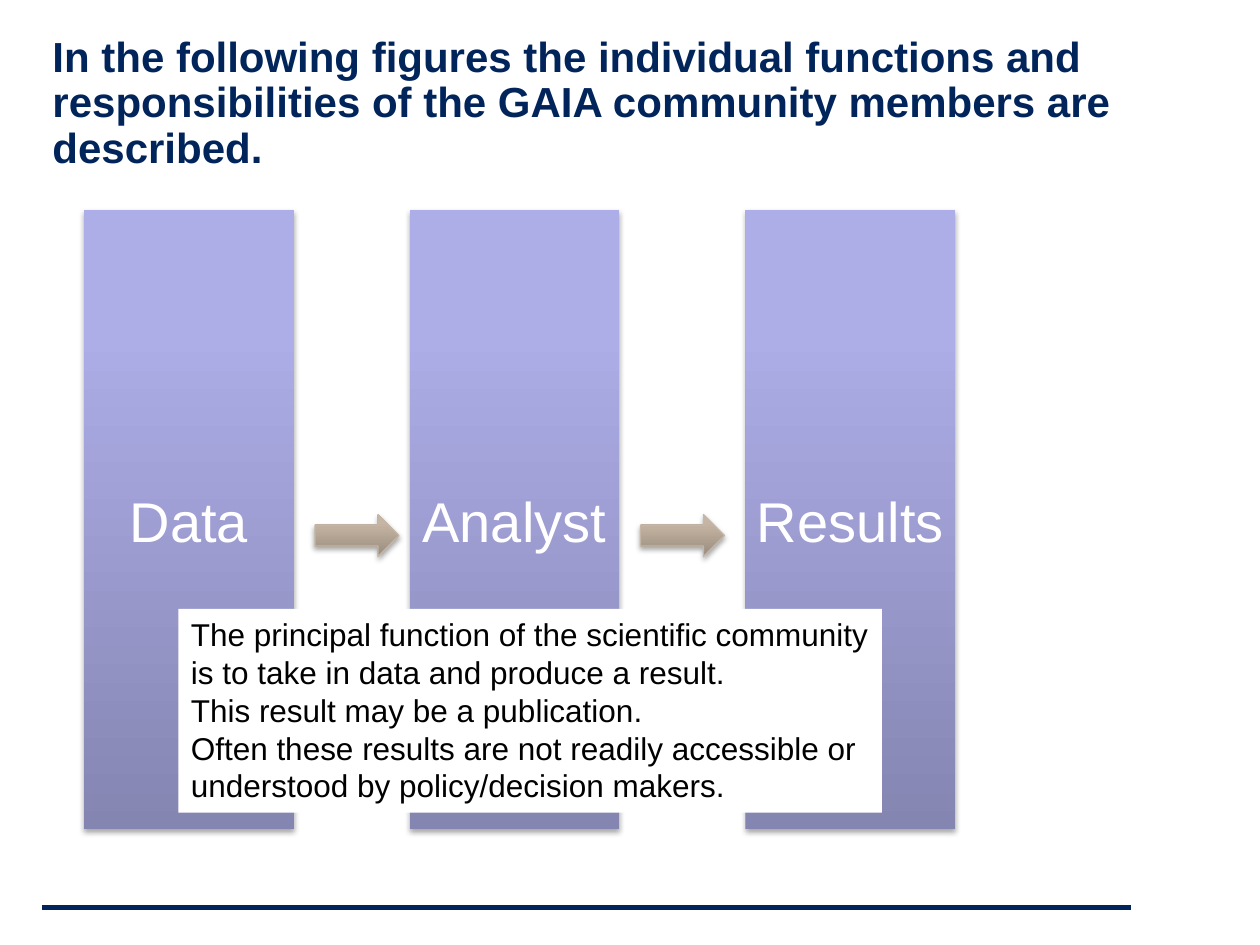
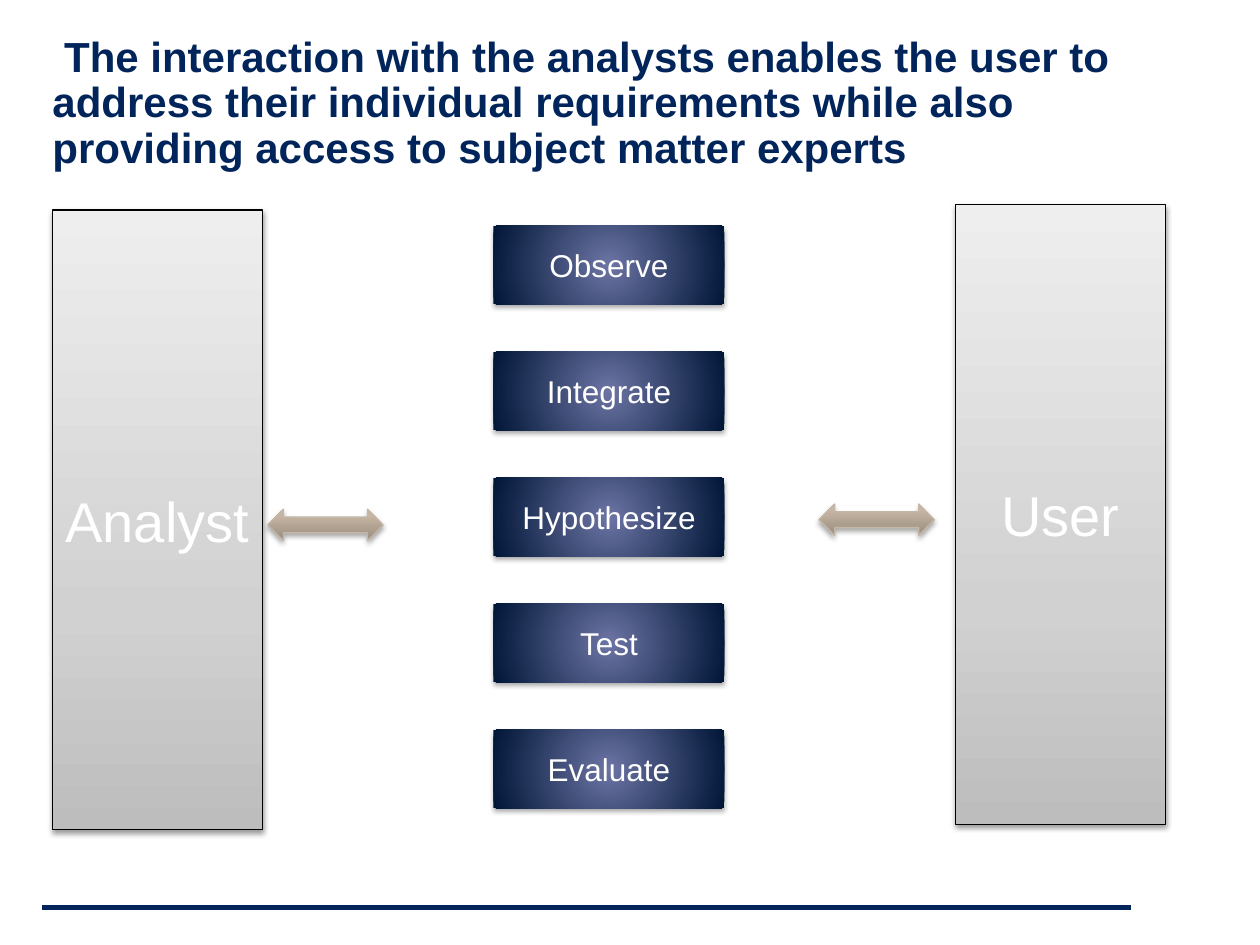
from dataclasses import dataclass
from typing import Optional

from lxml.etree import SubElement
from pptx import Presentation
from pptx.dml.color import RGBColor
from pptx.enum.shapes import MSO_CONNECTOR, MSO_SHAPE
from pptx.enum.text import MSO_ANCHOR, MSO_AUTO_SIZE, PP_ALIGN
from pptx.oxml.ns import qn
from pptx.util import Inches, Pt

COLORS = {
    "navy": "01255B",
    "white": "FFFFFF",
    "black": "000000",
    "tan": "C4B7A8",
}
FONT = "Arial"
PAGE_WIDTH, PAGE_HEIGHT = Inches(10), Inches(7.5)
COLUMNS, ROWS = 120, 90
PANEL_WIDTH, PANEL_HEIGHT = 20, 59


@dataclass(frozen=True)
class Look:
    stops: tuple[tuple[int, str], ...]
    line: Optional[str] = None
    radial: bool = False
    opacity: int = 35
    distance: float = 1.8


@dataclass(frozen=True)
class Block:
    column: float
    row: float
    width: float
    height: float
    look: Look
    label: str = ""
    size: int = 32
    kind: MSO_SHAPE = MSO_SHAPE.RECTANGLE


LAVENDER = Look(((0, "8585B2"), (80, "ADADE7"), (100, "ACACE9")))
SILVER = Look(((0, "BDBDBD"), (35, "D1D1D1"), (100, "EEEEEE")), "black",
              opacity=38, distance=1.6)
SAND = Look(((0, "988C7D"), (80, "C6B5A3"), (100, "C7B6A3")), "tan")
GLOW = Look(((0, "6C74A4"), (100, "001637")), radial=True)


def across(columns: float) -> int:
    return round(PAGE_WIDTH * columns / COLUMNS)


def down(rows: float) -> int:
    return round(PAGE_HEIGHT * rows / ROWS)


def color(name: str) -> RGBColor:
    return RGBColor.from_string(COLORS[name])


def format_text(frame, size: int, name: str, align: PP_ALIGN, bold: bool = False) -> None:
    for para in frame.paragraphs:
        para.alignment = align
        for span in para.runs:
            span.font.name = FONT
            span.font.size = Pt(size)
            span.font.bold = bold
            span.font.color.rgb = color(name)


def clear_margins(frame) -> None:
    frame.margin_left = frame.margin_right = 0
    frame.margin_top = frame.margin_bottom = 0


def add_color(parent, value: str):
    return SubElement(parent, qn("a:srgbClr"), val=value)


def paint_gradient(shape, look: Look) -> None:
    shape.fill.background()
    properties = shape.element.spPr
    empty_fill = properties.find(qn("a:noFill"))
    gradient = SubElement(properties, qn("a:gradFill"), rotWithShape="1")
    properties.replace(empty_fill, gradient)
    stop_list = SubElement(gradient, qn("a:gsLst"))
    for position, value in look.stops:
        add_color(SubElement(stop_list, qn("a:gs"), pos=str(position * 1000)), value)
    if look.radial:
        circle = SubElement(gradient, qn("a:path"), {"path": "circle"})
        SubElement(circle, qn("a:fillToRect"), dict.fromkeys("ltrb", "50000"))
    else:
        SubElement(gradient, qn("a:lin"), ang="16200000", scaled="0")


def cast_shadow(shape, look: Look) -> None:
    shape.shadow.inherit = False
    effects = shape.element.spPr.find(qn("a:effectLst"))
    shadow = SubElement(effects, qn("a:outerShdw"), blurRad=str(Pt(3.1)),
                        dist=str(Pt(look.distance)), dir="5400000", rotWithShape="0")
    SubElement(add_color(shadow, COLORS["black"]), qn("a:alpha"),
               val=str(look.opacity * 1000))


def add_block(page, block: Block) -> None:
    shape = page.shapes.add_shape(block.kind, across(block.column), down(block.row),
                                  across(block.width), down(block.height))
    paint_gradient(shape, block.look)
    if block.look.line:
        shape.line.color.rgb = color(block.look.line)
        shape.line.width = Pt(0.75)
    else:
        shape.line.fill.background()
    cast_shadow(shape, block.look)
    if block.label:
        frame = shape.text_frame
        frame.text = block.label
        frame.word_wrap = True
        frame.vertical_anchor = MSO_ANCHOR.MIDDLE
        clear_margins(frame)
        format_text(frame, block.size, "white", PP_ALIGN.CENTER)


def add_note(page, lines: list[str]) -> None:
    box = page.shapes.add_textbox(across(17), down(58), across(67), down(19.4))
    box.fill.solid()
    box.fill.fore_color.rgb = color("white")
    frame = box.text_frame
    frame.word_wrap = True
    frame.auto_size = MSO_AUTO_SIZE.SHAPE_TO_FIT_TEXT
    frame.text = "\n".join(lines)
    format_text(frame, 18, "black", PP_ALIGN.LEFT)


def add_page(deck, title: str):
    page = deck.slides.add_slide(deck.slide_layouts[5])
    frame = page.shapes.title.text_frame
    frame.text = title
    frame.auto_size = MSO_AUTO_SIZE.NONE
    frame.paragraphs[0].line_spacing = 0.9
    format_text(frame, 24, "navy", PP_ALIGN.LEFT, bold=True)
    return page


def prepare_layout(layout) -> None:
    title = layout.placeholders[0]
    title.left, title.top = across(5), down(8)
    title.width, title.height = across(108), down(8.4)
    title.text_frame.vertical_anchor = MSO_ANCHOR.BOTTOM
    clear_margins(title.text_frame)


def add_footer_rule(page) -> None:
    rule = page.shapes.add_connector(MSO_CONNECTOR.STRAIGHT, across(4), down(86.4),
                                     across(107.75), down(86.4))
    rule.line.color.rgb = color("navy")
    rule.line.width = Pt(3)
    SubElement(rule.element.spPr, qn("a:effectLst"))
    rule.element.find(".//" + qn("p:cNvPr")).set("id", "99")
    page.slide_layout.shapes.element.append(rule.element)


def build_functions(deck) -> None:
    page = add_page(deck, "In the following figures the individual functions and "
                          "responsibilities of the GAIA community members are described.")
    add_footer_rule(page)
    for column, label in ((8, "Data"), (39, "Analyst"), (71, "Results")):
        add_block(page, Block(column, 20, PANEL_WIDTH, PANEL_HEIGHT, LAVENDER, label))
    for column in (30, 61):
        add_block(page, Block(column, 49, 8, 4, SAND, kind=MSO_SHAPE.RIGHT_ARROW))
    add_note(page, [
        "The principal function of the scientific community is to take in data "
        "and produce a result.",
        "This result may be a publication.",
        "Often these results are not readily accessible or understood by "
        "policy/decision makers.",
    ])


def build_interaction(deck) -> None:
    page = add_page(deck, " The interaction with the analysts enables the user to address "
                          "their individual requirements while also providing access to "
                          "subject matter experts")
    for column, row, label in ((5, 20, "Analyst"), (91, 19.5, "User")):
        add_block(page, Block(column, row, PANEL_WIDTH, PANEL_HEIGHT, SILVER, label))
    for column, row in ((25.5, 48.5), (78, 48)):
        add_block(page, Block(column, row, 11, 3, SAND, kind=MSO_SHAPE.LEFT_RIGHT_ARROW))
    steps = ("Observe", "Integrate", "Hypothesize", "Test", "Evaluate")
    for index, step in enumerate(steps):
        add_block(page, Block(47, 21.5 + 12 * index, 22, 7.5, GLOW, step, 18))


def main() -> None:
    deck = Presentation()
    deck.slide_width, deck.slide_height = PAGE_WIDTH, PAGE_HEIGHT
    prepare_layout(deck.slide_layouts[5])
    build_functions(deck)
    build_interaction(deck)
    deck.save("out.pptx")


if __name__ == "__main__":
    main()
